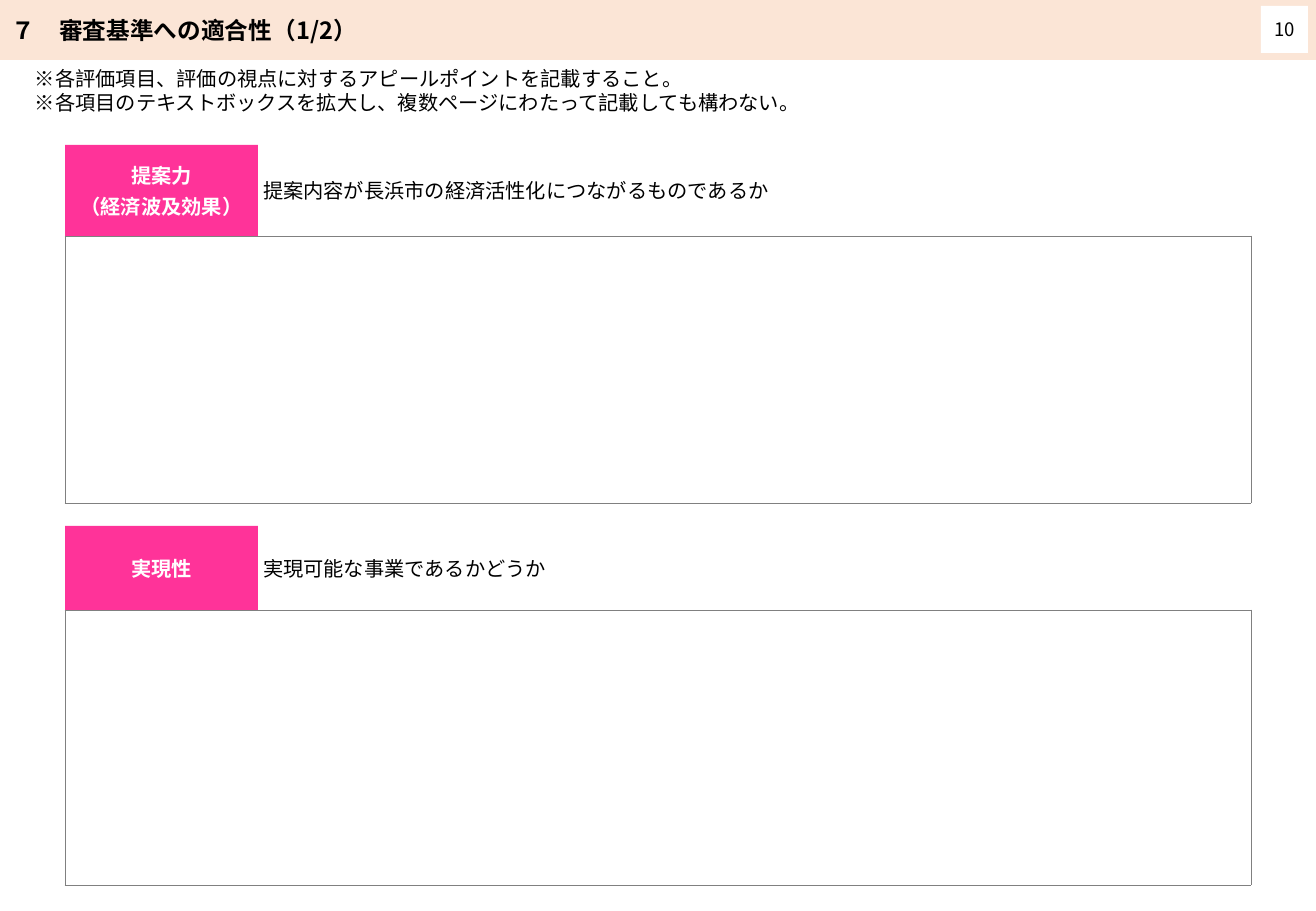
from dataclasses import dataclass

from pptx import Presentation
from pptx.dml.color import RGBColor as Rgb
from pptx.enum.shapes import MSO_SHAPE as Kind
from pptx.enum.text import MSO_ANCHOR as Anchor, PP_ALIGN as Align
from pptx.oxml import parse_xml
from pptx.oxml.ns import nsdecls, qn
from pptx.util import Pt

SCALE = 7526  # EMU per px


@dataclass(frozen=True)
class Theme:
    font: str = "Noto Sans CJK JP"
    black: str = "000000"
    white: str = "FFFFFF"
    peach: str = "FBE5D6"
    pink: str = "FF3399"
    gray: str = "808080"
    title: int = 14
    body: int = 12
    small: int = 11
    leading: float = 1.2
    after: int = 4


def emu(*sizes):
    return [size * SCALE for size in sizes]


class Page:
    def __init__(self, deck, theme):
        self.theme = theme
        self.slide = deck.slides.add_slide(deck.slide_layouts[6])
        self.shapes = self.slide.shapes

    def text(self, frame, lines, size, color, bold=False, align=Align.LEFT,
             after=0):
        frame.word_wrap = True
        for i, line in enumerate(lines):
            para = frame.add_paragraph() if i else frame.paragraphs[0]
            para.alignment = align
            para.line_spacing = Pt(size * self.theme.leading)
            para.space_after = Pt(after)
            run = para.add_run()
            run.text = line
            font = run.font
            font.name, font.size, font.bold = self.theme.font, Pt(size), bold
            font.color.rgb = Rgb.from_string(color)
            run._r.get_or_add_rPr().find(qn("a:latin")).addnext(parse_xml(
                f'<a:ea {nsdecls("a")} typeface="{self.theme.font}"/>'))

    def box(self, at, fill, lines, size, color, inset=None, shapes=None, **look):
        """Add a filled, borderless rectangle with middle-anchored text."""
        shape = (shapes or self.shapes).add_shape(Kind.RECTANGLE, *emu(*at))
        shape.shadow.inherit = False
        shape.fill.solid()
        shape.fill.fore_color.rgb = Rgb.from_string(fill)
        shape.line.fill.background()
        frame = shape.text_frame
        frame.vertical_anchor = Anchor.MIDDLE
        if inset is not None:
            frame.margin_left = frame.margin_right = inset * SCALE
            frame.margin_top = frame.margin_bottom = inset * SCALE
        self.text(frame, lines, size, color, **look)

    def note(self, at, lines):
        frame = self.shapes.add_textbox(*emu(*at)).text_frame
        self.text(frame, lines, self.theme.body, self.theme.black)

    def field(self, at):
        """Add a one-cell table as an empty answer area."""
        table = self.shapes.add_table(1, 1, *emu(*at)).table
        table.first_row = table.horz_banding = False
        cell = table.cell(0, 0)
        cell.fill.background()
        props = cell._tc.get_or_add_tcPr()
        for i, side in enumerate(("lnL", "lnR", "lnT", "lnB")):
            props.insert(i, parse_xml(
                f'<a:{side} {nsdecls("a")} w="{Pt(0.5)}"><a:solidFill>'
                f'<a:srgbClr val="{self.theme.gray}"/></a:solidFill></a:{side}>'))

    def section(self, top, head, body, label, point):
        """Add a label with its criterion above an answer area."""
        theme = self.theme
        left, wide, full = 65, 193, 1186
        group = self.shapes.add_group_shape().shapes
        look = dict(inset=5, shapes=group, after=theme.after)
        self.box((left, top, wide, head), theme.pink, label, theme.body,
                 theme.white, bold=True, align=Align.CENTER, **look)
        self.box((left + wide, top, full - wide, head), theme.white, [point],
                 theme.body, theme.black, **look)
        self.field((left, top + head, full, body))


def main():
    deck = Presentation()
    deck.slide_width, deck.slide_height = emu(1316, 911)
    theme = Theme()
    page = Page(deck, theme)
    page.box((0, 0, 1316, 60), theme.peach, ["７　審査基準への適合性（1/2）"],
             theme.title, theme.black, bold=True)
    page.box((1261, 6, 47, 47), theme.white, ["10"], theme.small, theme.black,
             align=Align.CENTER, inset=5)
    page.note((23, 60, 1271, 61), [
        "※各評価項目、評価の視点に対するアピールポイントを記載すること。",
        "※各項目のテキストボックスを拡大し、複数ページにわたって記載しても構わない。"])
    page.section(145, 91, 267, ["提案力", "（経済波及効果）"],
                 "提案内容が長浜市の経済活性化につながるものであるか")
    page.section(526, 84, 275, ["実現性"], "実現可能な事業であるかどうか")
    deck.save("out.pptx")


if __name__ == "__main__":
    main()
